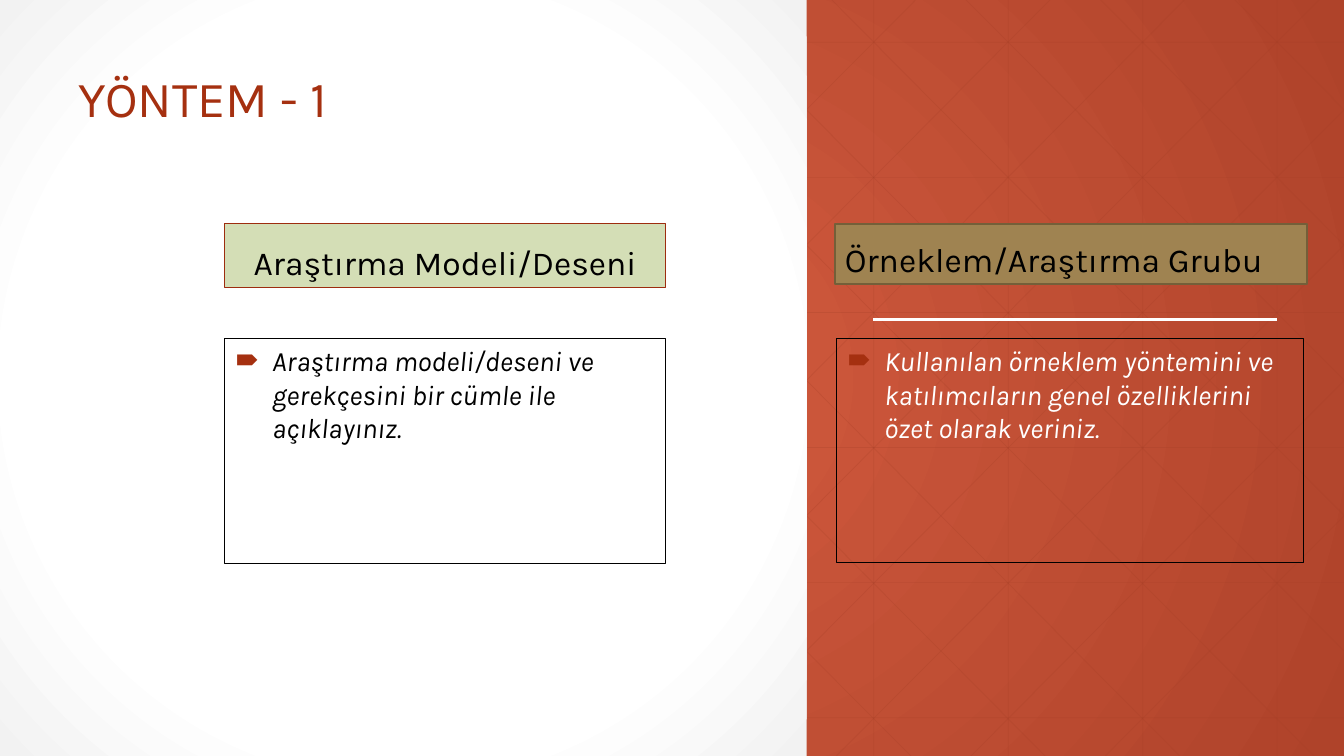
from lxml.etree import SubElement
from pptx import Presentation
from pptx.dml.color import RGBColor
from pptx.enum.shapes import MSO_CONNECTOR as Connector, MSO_SHAPE as Shape
from pptx.enum.text import MSO_ANCHOR as Anchor, MSO_AUTO_SIZE as AutoSize, PP_ALIGN as Align
from pptx.oxml.ns import qn
from pptx.util import Inches, Pt

WIDTH, HEIGHT, PANEL_WIDTH = 13.33, 7.5, 8
GRID_STEP, DIAGONAL_RUN = 4 / 3, 7.45
FONT = "Karla"
WHITE = RGBColor(0xFF, 0xFF, 0xFF)
BLACK = RGBColor(0, 0, 0)
PALE_GRAY = RGBColor(0xF2, 0xF2, 0xF2)
RUST = RGBColor(0xA5, 0x30, 0x10)
RUST_LINE = RGBColor(0x9D, 0x2D, 0x0F)
RUST_LIGHT = RGBColor(0xD1, 0x5A, 0x3E)
RUST_DARK = RGBColor(0xAF, 0x43, 0x2A)
GRID = RGBColor(0xA4, 0x3F, 0x27)
GREEN = RGBColor(0xD4, 0xDE, 0xB6)
OCHRE = RGBColor(0x9F, 0x83, 0x51)
OCHRE_LINE = RGBColor(0x74, 0x5F, 0x39)


def fill_radial(fill, owner, stops):
    """Fill the owner with a circular gradient spreading from its centre."""
    fill.gradient()
    gradient = next(owner.iter(qn("a:gradFill")))
    for child in list(gradient):
        gradient.remove(child)
    stop_list = SubElement(gradient, qn("a:gsLst"))
    for percent, color in stops:
        stop = SubElement(stop_list, qn("a:gs"), pos=str(percent * 1000))
        SubElement(stop, qn("a:srgbClr"), val=str(color))
    circle = SubElement(gradient, qn("a:path"), path="circle")
    SubElement(circle, qn("a:fillToRect"), l="50000", t="50000", r="50000", b="50000")


def add_line(page, start, end, color, width, opacity=100):
    """Draw a straight line without a shadow."""
    line = page.shapes.add_connector(Connector.STRAIGHT, *map(Inches, start + end))
    line.line.color.rgb = color
    line.line.width = Pt(width)
    properties = line.element.spPr
    SubElement(properties, qn("a:effectLst"))
    if opacity < 100:
        shade = next(properties.iter(qn("a:srgbClr")))
        SubElement(shade, qn("a:alpha"), val=str(opacity * 1000))


def add_diagonal(page, top, direction):
    """Draw a diagonal that starts at the top edge, cut at the slide's sides."""
    low, high = sorted((top, top + direction * DIAGONAL_RUN))
    ends = [(x, (x - top) * direction * HEIGHT / DIAGONAL_RUN)
            for x in (max(low, 0), min(high, WIDTH))]
    add_line(page, *ends, GRID, 0.5, 25)


def add_grid(page):
    """Draw the faint grid lines that reach the rust area."""
    for column in range(4):
        x = PANEL_WIDTH + GRID_STEP * (column + 0.5)
        add_line(page, (x, 0), (x, HEIGHT), GRID, 0.5, 25)
    for row in range(6):
        y = 0.42 + 1.34 * row
        add_line(page, (0, y), (WIDTH, y), GRID, 0.5, 25)
    for index in range(1, 10):
        add_diagonal(page, 0.25 + GRID_STEP * index, 1)
    for index in range(8):
        add_diagonal(page, 9.08 + GRID_STEP * index, -1)


def add_backdrop(page):
    """Draw the rust background, its grid, the white panel and the rule."""
    background = page.background.fill
    fill_radial(background, page.element, [(0, RUST_LIGHT), (100, RUST_DARK)])
    add_grid(page)
    panel = page.shapes.add_shape(Shape.RECTANGLE, 0, 0, Inches(PANEL_WIDTH), Inches(HEIGHT))
    panel.shadow.inherit = False
    panel.line.fill.background()
    fill_radial(panel.fill, panel.element, [(0, WHITE), (69, WHITE), (100, PALE_GRAY)])
    add_line(page, (8.66, 3.17), (12.67, 3.17), WHITE, 1.5)


def fill_placeholder(page, index, box, text, size, color, align=Align.LEFT,
                     anchor=Anchor.TOP, italic=False):
    """Place a placeholder in its box above the backdrop and write its text."""
    holder = next(item for item in page.placeholders if item.placeholder_format.idx == index)
    page.shapes.element.append(holder.element)
    holder.left, holder.top, holder.width, holder.height = map(Inches, box)
    frame = holder.text_frame
    frame.word_wrap = True
    frame.auto_size = AutoSize.NONE
    frame.vertical_anchor = anchor
    frame.margin_left = frame.margin_right = Inches(0.1)
    frame.margin_top = frame.margin_bottom = Inches(0.05)
    para = frame.paragraphs[0]
    para.alignment = align
    para.space_before = Pt(0)
    span = para.add_run()
    span.text = text
    span.font.name = FONT
    span.font.size = Pt(size)
    span.font.bold = False
    span.font.italic = italic
    span.font.color.rgb = color
    return holder


def add_outline(holder, color, width):
    """Give a placeholder a border."""
    holder.line.color.rgb = color
    holder.line.width = Pt(width)


def add_header(page, index, box, text, fill, border, width, align):
    """Write a section heading on a coloured bar."""
    holder = fill_placeholder(page, index, box, text, 24, BLACK, align, Anchor.BOTTOM)
    holder.fill.solid()
    holder.fill.fore_color.rgb = fill
    add_outline(holder, border, width)


def add_body(page, index, box, text, color):
    """Write a bulleted note in an outlined box."""
    holder = fill_placeholder(page, index, box, text, 20, color, italic=True)
    add_outline(holder, BLACK, 0.75)
    properties = holder.text_frame.paragraphs[0]._p.get_or_add_pPr()
    properties.set("marL", str(Inches(0.37)))
    properties.set("indent", str(Inches(-0.37)))
    bullet_color = SubElement(properties, qn("a:buClr"))
    SubElement(bullet_color, qn("a:srgbClr"), val=str(RUST))
    SubElement(properties, qn("a:buChar"), char="🠶")


def add_method_slide(deck):
    """Build the slide on research model and sample."""
    page = deck.slides.add_slide(deck.slide_layouts.get_by_name("Comparison"))
    add_backdrop(page)
    fill_placeholder(page, 0, (0.68, 0.62, 6.16, 0.7), "YÖNTEM - 1", 36, RUST)
    add_header(page, 1, (2.23, 2.22, 4.37, 0.63), "Araştırma Modeli/Deseni",
               GREEN, RUST_LINE, 0.75, Align.CENTER)
    add_body(page, 2, (2.23, 3.36, 4.37, 2.23),
             "Araştırma modeli/deseni ve gerekçesini bir cümle ile açıklayınız.", BLACK)
    add_header(page, 3, (8.28, 2.22, 4.68, 0.6), "Örneklem/Araştırma Grubu",
               OCHRE, OCHRE_LINE, 1.25, Align.LEFT)
    add_body(page, 4, (8.3, 3.36, 4.63, 2.22),
             "Kullanılan örneklem yöntemini ve katılımcıların genel özelliklerini "
             "özet olarak veriniz.", WHITE)


def main():
    """Create the deck and save it."""
    deck = Presentation()
    deck.slide_width, deck.slide_height = Inches(WIDTH), Inches(HEIGHT)
    add_method_slide(deck)
    deck.save("out.pptx")


if __name__ == "__main__":
    main()
